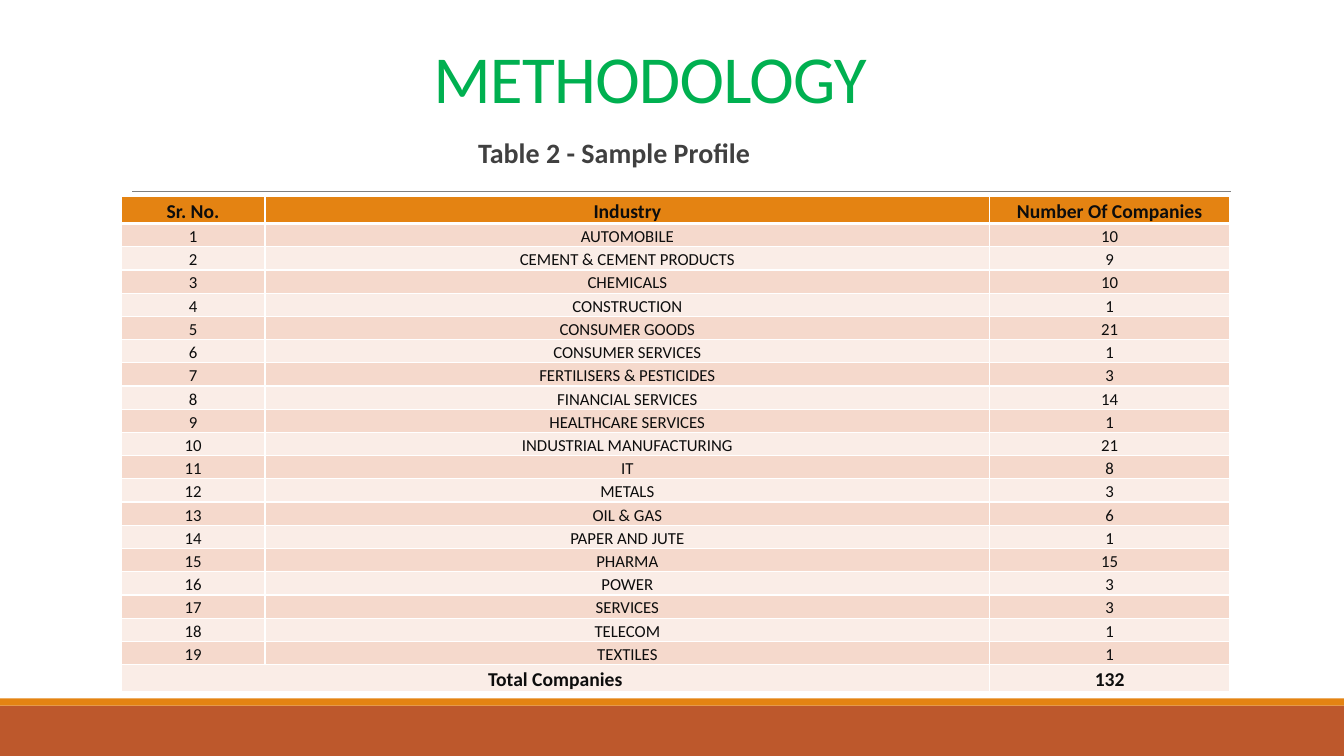
from lxml import etree
from pptx import Presentation
from pptx import util as u
from pptx.dml.color import RGBColor
from pptx.enum import shapes, text
from pptx.oxml import ns

WHITE, ORANGE, RUST, GREY = "FFFFFF", "E48312", "BD582C", "808080"
BANDS = ["FAEDE7", "F5D9CC"]
FIRMS = [
    ("AUTOMOBILE", 10), ("CEMENT & CEMENT PRODUCTS", 9), ("CHEMICALS", 10),
    ("CONSTRUCTION", 1), ("CONSUMER GOODS", 21), ("CONSUMER SERVICES", 1),
    ("FERTILISERS & PESTICIDES", 3), ("FINANCIAL SERVICES", 14),
    ("HEALTHCARE SERVICES", 1), ("INDUSTRIAL MANUFACTURING", 21), ("IT", 8),
    ("METALS", 3), ("OIL & GAS", 6), ("PAPER AND JUTE", 1), ("PHARMA", 15),
    ("POWER", 3), ("SERVICES", 3), ("TELECOM", 1), ("TEXTILES", 1),
]


def paint(target, color):
    """Fill a shape or cell with one colour."""
    target.fill.solid()
    target.fill.fore_color.rgb = RGBColor.from_string(color)


def write(para, words, size, color, bold=False):
    run = para.add_run()
    run.text = words
    font = run.font
    font.name, font.size, font.bold = "Calibri", u.Pt(size), bold
    font.color.rgb = RGBColor.from_string(color)
    return run


def add_band(slide, box, color):
    band = slide.shapes.add_shape(shapes.MSO_SHAPE.RECTANGLE, *map(u.Cm, box))
    band.shadow.inherit = False
    band.line.fill.background()
    paint(band, color)


def add_rule(slide, left, top, width):
    ends = map(u.Cm, (left, top, left + width, top))
    rule = slide.shapes.add_connector(shapes.MSO_CONNECTOR.STRAIGHT, *ends)
    rule.line.width = u.Pt(0.5)
    rule.line.color.rgb = RGBColor.from_string(GREY)
    etree.SubElement(rule.element.spPr, ns.qn("a:effectLst"))


def add_line(slide, box, indent, inset, space):
    """Add a text box with one indented paragraph and return the paragraph."""
    frame = slide.shapes.add_textbox(*map(u.Cm, box)).text_frame
    frame.word_wrap = True
    frame.margin_left = frame.margin_right = u.Cm(inset)
    para = frame.paragraphs[0]
    para.line_spacing = space
    para._p.get_or_add_pPr().set("marL", str(u.Cm(indent)))
    return frame, para


def add_heads(slide, left, top, width):
    frame, para = add_line(slide, (left, top, width, 2.29), 7.62, 0.25, 0.85)
    frame.vertical_anchor = text.MSO_ANCHOR.BOTTOM
    run = write(para, "METHODOLOGY", 48, "00B050")
    run.font._element.set("spc", "-50")
    box = (left, top + 2.59, width + 0.25, 1.32)
    frame, para = add_line(slide, box, 9, 0, 0.9)
    write(para, "Table 2 - Sample Profile", 20, "404040", True)


def edge(cell, low):
    """Draw white cell borders; low is the width of the bottom one."""
    props = cell._tc.get_or_add_tcPr()
    for spot, (side, width) in enumerate(zip("LRTB", (1, 1, 1, low))):
        line = etree.Element(ns.qn("a:ln" + side), w=str(u.Pt(width)))
        fill = etree.SubElement(line, ns.qn("a:solidFill"))
        etree.SubElement(fill, ns.qn("a:srgbClr"), val=WHITE)
        props.insert(spot, line)


def fill_cell(cell, words, color, strong, low):
    cell.margin_left = cell.margin_right = u.Cm(0.18)
    cell.margin_top = cell.margin_bottom = 0
    cell.vertical_anchor = text.MSO_ANCHOR.MIDDLE
    paint(cell, color)
    edge(cell, low)
    para = cell.text_frame.paragraphs[0]
    para.alignment = text.PP_ALIGN.CENTER
    para.line_spacing = 1.15
    if words:
        write(para, words, 14 if strong else 12, "0D0D0D", strong)


def add_grid(slide, left, top, widths):
    total = sum(count for name, count in FIRMS)
    rows = [("Sr. No.", "Industry", "Number Of Companies")]
    rows += [(str(n), name, str(count))
             for n, (name, count) in enumerate(FIRMS, 1)]
    rows.append(("Total Companies", "", str(total)))
    last = len(rows) - 1
    box = map(u.Cm, (left, top, sum(widths), 11.94))
    grid = slide.shapes.add_table(len(rows), len(widths), *box).table
    for col, width in zip(grid.columns, widths):
        col.width = u.Cm(width)
    for r, row in enumerate(rows):
        strong = r in (0, last)
        grid.rows[r].height = u.Cm(0.64 if strong else 0.56)
        color = BANDS[r % 2] if r else ORANGE
        for c, words in enumerate(row):
            fill_cell(grid.cell(r, c), words, color, strong, 1 if r else 3)
    grid.cell(last, 0).merge(grid.cell(last, 1))


def main():
    deck = Presentation()
    deck.slide_width, deck.slide_height = u.Cm(33.87), u.Cm(19.05)
    slide = deck.slides.add_slide(deck.slide_layouts[6])
    add_band(slide, (0, 17.78, 33.87, 1.27), RUST)
    add_band(slide, (0, 17.6, 33.87, 0.18), ORANGE)
    add_rule(slide, 3.33, 4.83, 27.68)
    add_heads(slide, 3.05, 0.79, 27.94)
    add_grid(slide, 3.05, 4.95, (3.63, 18.26, 6.05))
    deck.save("out.pptx")


if __name__ == "__main__":
    main()
